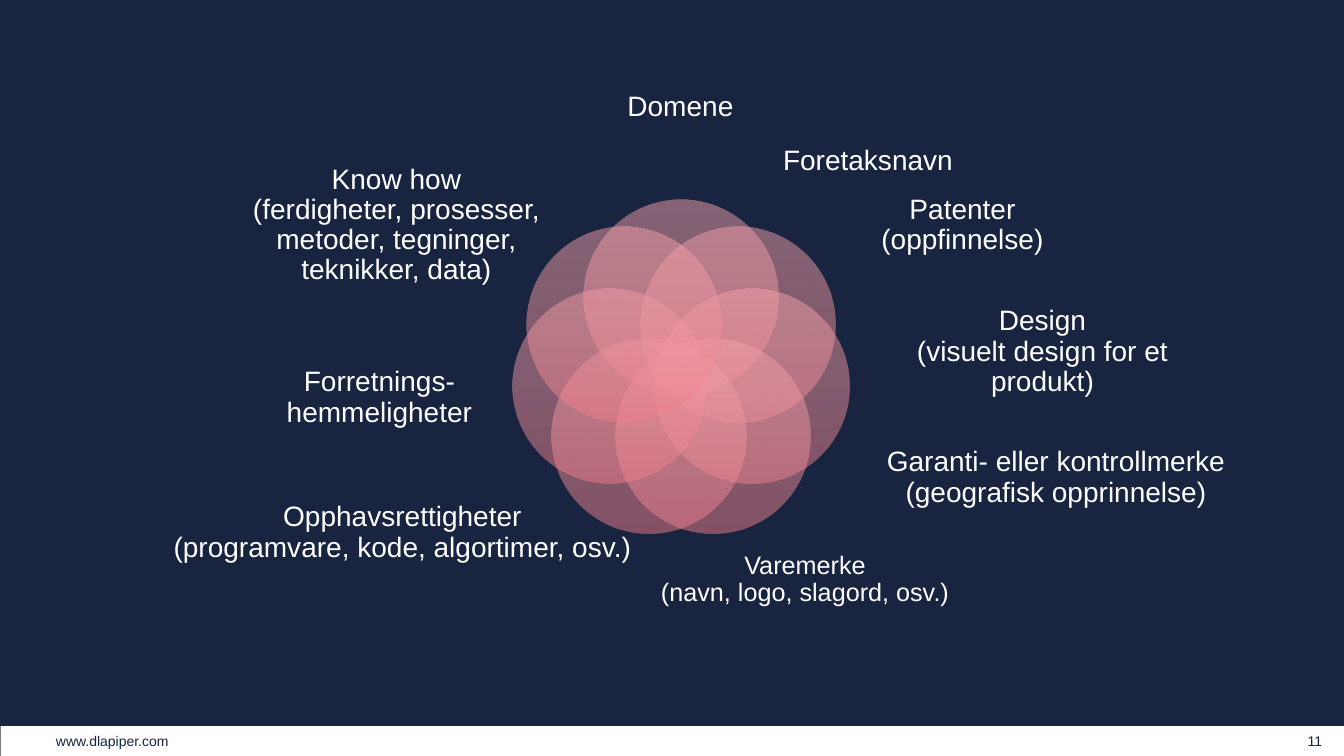
"""Build a slide with a ring of seven overlapping circles and labels on intellectual property."""
from dataclasses import dataclass
from math import cos, radians, sin

from pptx import Presentation
from pptx import oxml
from pptx import util as u
from pptx.dml.color import RGBColor
from pptx.enum import shapes, text
from pptx.oxml import ns


@dataclass(frozen=True)
class Theme:
    """Hold the colours and type sizes of the slide."""
    font: str = "Arial"
    navy: str = "182440"
    white: str = "FFFFFF"
    edge: str = "7B7B7B"
    petal: tuple = ((0, "F3A3AC"), (50, "EF959E"), (100, "F2808C"))
    petal_opacity: int = 50
    label_size: int = 20
    small_size: int = 18
    footer_size: int = 10


THEME = Theme()
EMU_PER_PX = 914400 / 100.8
SLIDE = (1344, 756)
PANEL = (0, 0, 1344, 726)
RING = {"centre": (681, 370), "radius": 73, "diameter": 195, "count": 7}

LABELS = [
    ("Domene", (430, 47, 501, 120), THEME.label_size),
    ("Patenter (oppfinnelse)", (857, 160, 211, 131), THEME.label_size),
    ("Design\n(visuelt design for et produkt)", (881, 282, 323, 140), THEME.label_size),
    ("Varemerke\n(navn, logo, slagord, osv.)", (561, 516, 488, 128), THEME.small_size),
    ("Opphavsrettigheter\n(programvare, kode, algortimer, osv.)", (140, 469, 525, 128), THEME.label_size),
    ("Forretnings-\nhemmeligheter", (201, 328, 357, 140), THEME.label_size),
    ("Know how\n(ferdigheter, prosesser, metoder, tegninger, teknikker, data)",
     (252, 160, 289, 131), THEME.label_size),
    ("Foretaksnavn", (734, 96, 268, 131), THEME.label_size),
    ("Garanti- eller kontrollmerke (geografisk opprinnelse)", (866, 408, 380, 140), THEME.label_size),
]
FOOTERS = [
    ("www.dlapiper.com", (56, 727, 191, 28), text.PP_ALIGN.LEFT),
    ("11", (1287, 726, 56, 30), text.PP_ALIGN.CENTER),
]


def emu(px):
    return u.Emu(round(px * EMU_PER_PX))


def apply(target, **values):
    for name, value in values.items():
        setattr(target, name, value)


def add_shape(slide, kind, box):
    shape = slide.shapes.add_shape(kind, *map(emu, box))
    shape.shadow.inherit = False
    shape.fill.background()
    shape.line.fill.background()
    return shape


def add_frame(slide):
    border = add_shape(slide, shapes.MSO_SHAPE.RECTANGLE, (0, 0, *SLIDE))
    border.line.color.rgb = RGBColor.from_string(THEME.edge)
    border.line.width = u.Pt(0.15)
    panel = add_shape(slide, shapes.MSO_SHAPE.RECTANGLE, PANEL)
    panel.fill.solid()
    panel.fill.fore_color.rgb = RGBColor.from_string(THEME.navy)


def fill_petal(shape):
    stops = "".join(
        f'<a:gs pos="{position * 1000}"><a:srgbClr val="{colour}">'
        f'<a:alpha val="{THEME.petal_opacity * 1000}"/></a:srgbClr></a:gs>'
        for position, colour in THEME.petal)
    gradient = oxml.parse_xml(
        f'<a:gradFill {ns.nsdecls("a")} rotWithShape="1"><a:gsLst>{stops}</a:gsLst>'
        '<a:lin ang="5400000" scaled="0"/></a:gradFill>')
    properties = shape.element.spPr
    properties.replace(properties.find(ns.qn("a:noFill")), gradient)


def add_ring(slide):
    diameter = RING["diameter"]
    for index in range(RING["count"]):
        angle = radians(360 * index / RING["count"])
        left = RING["centre"][0] + RING["radius"] * sin(angle) - diameter / 2
        top = RING["centre"][1] - RING["radius"] * cos(angle) - diameter / 2
        fill_petal(add_shape(slide, shapes.MSO_SHAPE.OVAL, (left, top, diameter, diameter)))


def add_text(slide, words, box, size, colour, **paragraph_format):
    frame = slide.shapes.add_textbox(*map(emu, box)).text_frame
    apply(frame, word_wrap=True, vertical_anchor=text.MSO_ANCHOR.MIDDLE,
          margin_left=0, margin_top=0, margin_right=0, margin_bottom=0)
    paragraph = frame.paragraphs[0]
    paragraph.text = words
    apply(paragraph, **paragraph_format)
    for run in paragraph.runs:
        apply(run.font, name=THEME.font, size=u.Pt(size))
        run.font.color.rgb = RGBColor.from_string(colour)


def main():
    presentation = Presentation()
    apply(presentation, slide_width=emu(SLIDE[0]), slide_height=emu(SLIDE[1]))
    slide = presentation.slides.add_slide(presentation.slide_layouts[6])
    add_frame(slide)
    for words, box, alignment in FOOTERS:
        add_text(slide, words, box, THEME.footer_size, THEME.navy, alignment=alignment)
    add_ring(slide)
    for words, box, size in LABELS:
        add_text(slide, words, box, size, THEME.white,
                 alignment=text.PP_ALIGN.CENTER, line_spacing=0.9)
    presentation.save("out.pptx")


if __name__ == "__main__":
    main()
